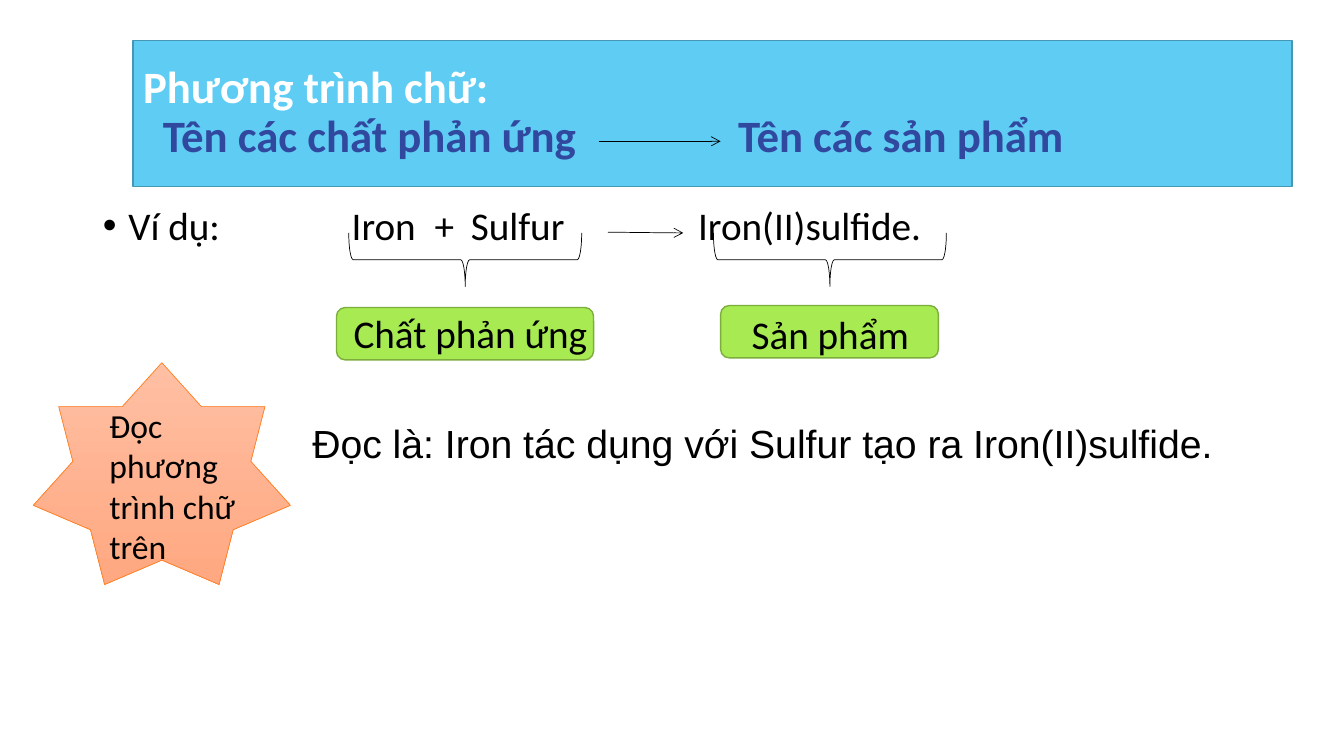
"""Build the slide on word equations in chemistry."""
from pptx import Presentation as Deck
from pptx.dml.color import RGBColor as RGB
from pptx.enum.shapes import MSO_CONNECTOR as Link, MSO_SHAPE as Kind
from pptx.enum.text import MSO_ANCHOR as Anchor, MSO_AUTO_SIZE as Auto, PP_ALIGN as Align
from pptx.oxml.ns import qn
from pptx.util import Cm, Pt
from lxml.etree import SubElement as Sub

WHITE = RGB(0xFF, 0xFF, 0xFF)
BLACK = RGB(0x00, 0x00, 0x00)
NAVY = RGB(0x31, 0x48, 0x9F)
SKY = RGB(0x5E, 0xCC, 0xF3)
TEAL = RGB(0x46, 0x97, 0xB4)
LIME = RGB(0xA7, 0xEA, 0x52)
GREEN = RGB(0x7C, 0xAD, 0x3D)
PEACH = RGB(0xFF, 0xBF, 0xA3)
CORAL = RGB(0xFF, 0xA8, 0x81)
ORANGE = RGB(0xFF, 0x80, 0x21)


def set_all(item, **form):
    """Set each given attribute on the item."""
    for name, value in form.items():
        setattr(item, name, value)


def place(shape, box):
    """Move and size a shape, in centimetres."""
    names = ("left", "top", "width", "height")
    set_all(shape, **dict(zip(names, map(Cm, box))))


def draw_line(shape, color, width):
    """Give the outline a colour and a width."""
    shape.line.color.rgb = color
    shape.line.width = Pt(width)


def add_run(para, text, size, color=BLACK, face="Calibri", bold=False):
    """Add one formatted run to a paragraph."""
    run = para.add_run()
    run.text = text
    set_all(run.font, size=Pt(size), name=face, bold=bold)
    run.font.color.rgb = color


def add_tabs(para, stops):
    """Add left tab stops, in centimetres."""
    tabs = Sub(para._p.get_or_add_pPr(), qn("a:tabLst"))
    for stop in stops:
        Sub(tabs, qn("a:tab"), pos=str(Cm(stop)), algn="l")


def add_bullet(para, indent):
    """Add a round bullet with a hanging indent."""
    props = para._p.get_or_add_pPr()
    props.set("marL", str(Cm(indent)))
    props.set("indent", str(-Cm(indent)))
    Sub(props, qn("a:buFont"), typeface="Arial")
    Sub(props, qn("a:buChar"), char="•")


def add_form(slide, kind, box, color, width=0.5, fill=None):
    """Add a preset shape with an outline and an optional fill."""
    shape = slide.shapes.add_shape(kind, *map(Cm, box))
    shape.shadow.inherit = False
    draw_line(shape, color, width)
    if fill is None:
        shape.fill.background()
    else:
        shape.fill.solid()
        shape.fill.fore_color.rgb = fill
    return shape


def add_arrow(slide, start, end):
    """Add a thin arrow between two points."""
    arrow = slide.shapes.add_connector(Link.STRAIGHT, *map(Cm, start + end))
    draw_line(arrow, BLACK, 0.5)
    Sub(arrow.line._get_or_add_ln(), qn("a:tailEnd"), type="arrow")
    Sub(arrow._element.spPr, qn("a:effectLst"))


def add_text(slide, box, text, size=28, face="Calibri", wrap=True):
    """Add a text box with one run."""
    frame = slide.shapes.add_textbox(*map(Cm, box)).text_frame
    set_all(frame, word_wrap=wrap, auto_size=Auto.SHAPE_TO_FIT_TEXT)
    add_run(frame.paragraphs[0], text, size, face=face)


def fill_title(title):
    """Fill the title band with the general word equation."""
    place(title, (3.35, 1.02, 29.21, 3.68))
    title.fill.solid()
    title.fill.fore_color.rgb = SKY
    draw_line(title, TEAL, 1)
    set_all(title.text_frame, vertical_anchor=Anchor.MIDDLE, auto_size=Auto.NONE)
    para = title.text_frame.paragraphs[0]
    set_all(para, alignment=Align.LEFT, line_spacing=0.9)
    add_tabs(para, (0.5, 15))
    add_run(para, "Phương trình chữ:", 32, WHITE, bold=True)
    para.add_line_break()
    add_run(para, "\tTên các chất phản ứng\tTên các sản phẩm", 32, NAVY, bold=True)


def fill_body(body):
    """Fill the list with the example equation."""
    place(body, (2.34, 5.08, 28.58, 2.54))
    body.text_frame.auto_size = Auto.NONE
    para = body.text_frame.paragraphs[0]
    set_all(para, line_spacing=0.9, space_before=Pt(0))
    add_bullet(para, 0.64)
    add_tabs(para, (6.27, 8.36, 9.27, 15))
    add_run(para, "Ví dụ:\tIron\t+\tSulfur\tIron(II)sulfide.", 28)


def main():
    """Build and save the slide."""
    deck = Deck()
    set_all(deck, slide_width=Cm(33.87), slide_height=Cm(19.05))
    slide = deck.slides.add_slide(deck.slide_layouts[1])
    fill_title(slide.shapes.title)
    fill_body(slide.placeholders[1])

    add_arrow(slide, (15.09, 3.56), (18.16, 3.56))
    add_arrow(slide, (15.32, 5.85), (17.22, 5.87))
    for left in (11.05, 20.24):
        brace = add_form(slide, Kind.LEFT_BRACE, (left, 3.61, 1.35, 5.87), BLACK)
        brace.rotation = 270
    for box in ((8.48, 7.75, 6.48, 1.32), (18.16, 7.7, 5.49, 1.32)):
        add_form(slide, Kind.ROUNDED_RECTANGLE, box, GREEN, 1, LIME)
    add_text(slide, (8.66, 7.67, 6.91, 1.45), "Chất phản ứng")
    add_text(slide, (18.69, 7.7, 4.47, 1.45), "Sản phẩm", wrap=False)

    star = add_form(slide, Kind.STAR_7_POINT, (0.84, 9.14, 6.48, 5.59), ORANGE)
    star.fill.gradient()
    star.fill.gradient_angle = 270
    for stop, color in zip(star.fill.gradient_stops, (PEACH, CORAL)):
        stop.color.rgb = color
    add_text(slide, (2.51, 10.08, 3.96, 4.37), "Đọc phương trình chữ trên", 24)
    add_text(slide, (7.62, 10.44, 23.93, 1.45),
             "Đọc là: Iron tác dụng với Sulfur tạo ra Iron(II)sulfide.", face="Arial")
    deck.save("out.pptx")


if __name__ == "__main__":
    main()
